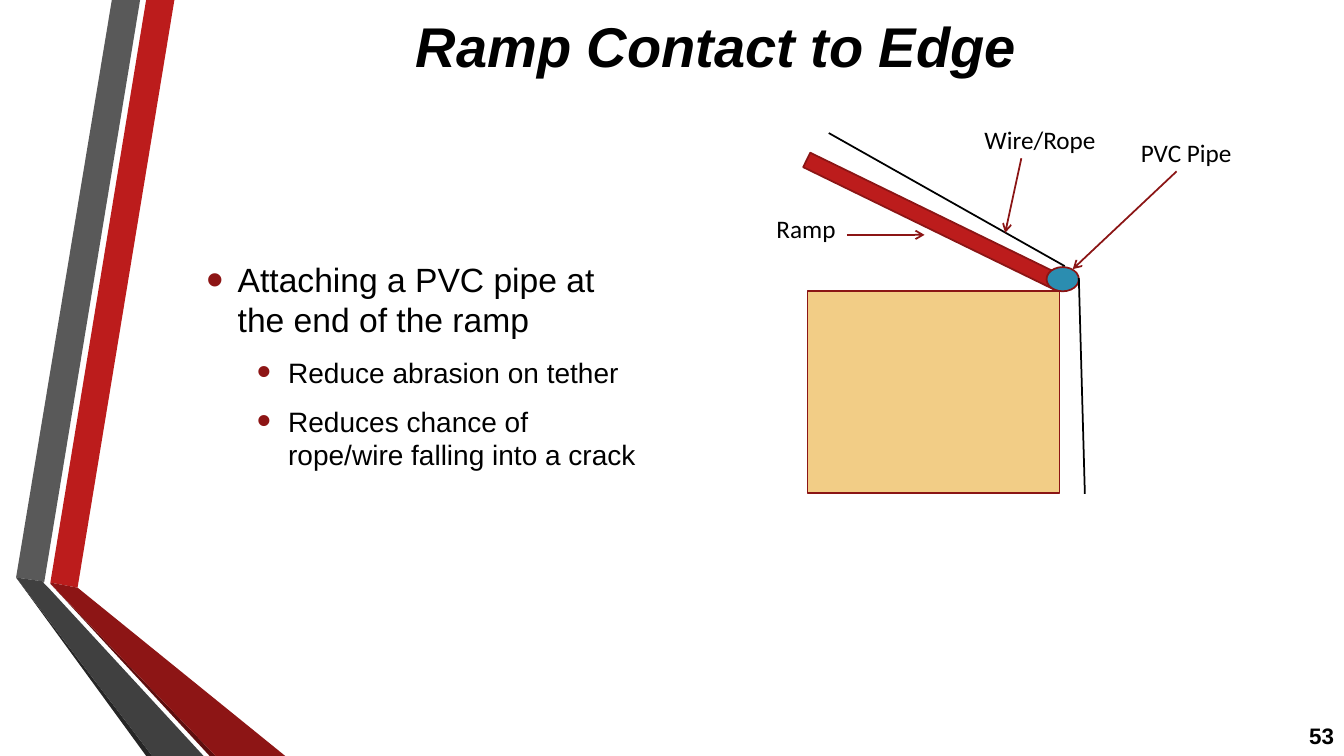
from dataclasses import dataclass

from lxml import etree
from pptx import Presentation
from pptx.dml.color import RGBColor
from pptx.enum.shapes import MSO_CONNECTOR, MSO_SHAPE
from pptx.enum.text import MSO_ANCHOR, PP_ALIGN
from pptx.oxml.ns import qn
from pptx.util import Inches, Pt

RECTANGLE, OVAL = MSO_SHAPE.RECTANGLE, MSO_SHAPE.OVAL
STRAIGHT = MSO_CONNECTOR.STRAIGHT
LEFT, CENTER, RIGHT = PP_ALIGN.LEFT, PP_ALIGN.CENTER, PP_ALIGN.RIGHT
TOP, MIDDLE = MSO_ANCHOR.TOP, MSO_ANCHOR.MIDDLE
BLACK, RED, DARK_RED, OUTLINE = "000000", "BC1C1C", "8D1515", "8B1515"
LINE_WIDTH = Pt(1.25)


@dataclass(frozen=True)
class Ribbon:
    """A filled polygon of the folded side band."""
    color: str
    points: tuple


@dataclass(frozen=True)
class Part:
    """A solid piece of the ramp diagram."""
    kind: int
    frame: tuple
    color: str
    rotation: float = 0


@dataclass(frozen=True)
class Stroke:
    """A straight line with an optional arrowhead at its end."""
    start: tuple
    end: tuple
    color: str = BLACK
    arrow: bool = False


@dataclass(frozen=True)
class Label:
    """A diagram caption."""
    text: str
    frame: tuple


@dataclass(frozen=True)
class Bullet:
    """A bulleted paragraph."""
    text: str
    level: int
    size: int
    indent: float
    before: int


RIBBONS = (
    Ribbon(RED, ((0.5, 5.78), (0.77, 5.83), (1.73, 0), (1.45, 0))),
    Ribbon("595959", ((1.39, 0), (1.11, 0), (0.16, 5.73), (0.44, 5.77))),
    Ribbon("262626", ((0.16, 5.73), (1.45, 7.5), (1.51, 7.5))),
    Ribbon("5E0E0E", ((0.5, 5.79), (2.08, 7.5), (2.14, 7.5))),
    Ribbon(DARK_RED, ((0.5, 5.79), (2.14, 7.5), (2.83, 7.5), (0.77, 5.83), (0.5, 5.78))),
    Ribbon("404040", ((2.02, 7.5), (0.48, 5.83), (0.43, 5.78), (0.44, 5.77),
                      (0.16, 5.73), (1.51, 7.5))),
)
PARTS = (
    Part(RECTANGLE, (8.01, 2.89, 2.5, 2), "F2CD86"),
    Part(RECTANGLE, (9.18, 0.8, 0.16, 2.8), RED, 296),
    Part(OVAL, (10.38, 2.65, 0.32, 0.24), "2B8DB0"),
)
STROKES = (
    Stroke((8.22, 1.32), (10.56, 2.64)),
    Stroke((10.7, 2.76), (10.76, 4.9)),
    Stroke((11.67, 1.7), (10.64, 2.67), OUTLINE, True),
    Stroke((8.4, 2.33), (9.17, 2.33), OUTLINE, True),
    Stroke((10.13, 1.57), (9.97, 2.31), OUTLINE, True),
)
LABELS = (
    Label("PVC Pipe", (10.81, 1.31, 1.91, 0.4)),
    Label("Ramp", (7.43, 2.07, 1.13, 0.4)),
    Label("Wire/Rope", (9.6, 1.18, 1.43, 0.4)),
)
BULLETS = (
    Bullet("Attaching a PVC pipe at the end of the ramp", 0, 24, 0.31, 0),
    Bullet("Reduce abrasion on tether", 1, 20, 0.81, 5),
    Bullet("Reduces chance of rope/wire falling into a crack", 1, 20, 0.81, 5),
)


def rgb(color: str) -> RGBColor:
    """Turn a hex string into a colour."""
    return RGBColor.from_string(color)


def lengths(values: tuple) -> list:
    """Convert a tuple of inches into lengths."""
    return [Inches(value) for value in values]


def paint(shape, color: str) -> None:
    """Give a shape a solid fill and no shadow."""
    shape.shadow.inherit = False
    shape.fill.solid()
    shape.fill.fore_color.rgb = rgb(color)


def write(para, text: str, align: int, **formats) -> None:
    """Add black text to a paragraph with the given font values."""
    para.alignment = align
    span = para.add_run()
    span.text = text
    for name, value in formats.items():
        setattr(span.font, name, value)
    span.font.color.rgb = rgb(BLACK)


def add_box(slide, frame: tuple, anchor: int = TOP):
    """Add a wrapping text box and return its text frame."""
    box = slide.shapes.add_textbox(*lengths(frame)).text_frame
    box.word_wrap = True
    box.vertical_anchor = anchor
    return box


def add_ribbon(slide, ribbon: Ribbon) -> None:
    """Draw one polygon of the side band."""
    first, *rest = [lengths(point) for point in ribbon.points]
    builder = slide.shapes.build_freeform(*first)
    builder.add_line_segments(rest, close=True)
    shape = builder.convert_to_shape()
    paint(shape, ribbon.color)
    shape.line.fill.background()


def add_part(slide, part: Part) -> None:
    """Draw one outlined piece of the diagram."""
    shape = slide.shapes.add_shape(part.kind, *lengths(part.frame))
    paint(shape, part.color)
    shape.line.color.rgb = rgb(OUTLINE)
    shape.line.width = LINE_WIDTH
    shape.rotation = part.rotation


def add_stroke(slide, stroke: Stroke) -> None:
    """Draw a line or an arrow."""
    line = slide.shapes.add_connector(STRAIGHT, *lengths(stroke.start + stroke.end))
    line.line.color.rgb = rgb(stroke.color)
    line.line.width = LINE_WIDTH
    properties = line._element.spPr
    if stroke.arrow:
        etree.SubElement(properties.find(qn("a:ln")), qn("a:tailEnd"), type="arrow")
    etree.SubElement(properties, qn("a:effectLst"))


def add_bullet(para, bullet: Bullet) -> None:
    """Fill a paragraph with a bulleted item."""
    para.level = bullet.level
    para.space_before, para.space_after = Pt(bullet.before), Pt(6)
    properties = para._p.get_or_add_pPr()
    properties.set("marL", str(Inches(bullet.indent)))
    properties.set("indent", str(Inches(-0.31)))
    color = etree.SubElement(properties, qn("a:buClr"))
    etree.SubElement(color, qn("a:srgbClr"), val=DARK_RED)
    etree.SubElement(properties, qn("a:buSzPct"), val="145000")
    etree.SubElement(properties, qn("a:buFont"), typeface="Arial")
    etree.SubElement(properties, qn("a:buChar"), char="•")
    write(para, bullet.text, LEFT, name="Arial", size=Pt(bullet.size))


def main() -> None:
    """Build and save the slide."""
    deck = Presentation()
    deck.slide_width, deck.slide_height = lengths((13.33, 7.5))
    slide = deck.slides.add_slide(deck.slide_layouts[5])
    for ribbon in RIBBONS:
        add_ribbon(slide, ribbon)
    title = slide.shapes.title
    title.left, title.top, title.width, title.height = lengths((1.62, 0.01, 10.96, 0.88))
    title.text_frame.vertical_anchor = MIDDLE
    write(title.text_frame.paragraphs[0], "Ramp Contact to Edge", CENTER,
          name="Arial", size=Pt(40), bold=True, italic=True)
    body = add_box(slide, (1.95, 2.52, 4.54, 4.22))
    for index, bullet in enumerate(BULLETS):
        add_bullet(body.add_paragraph() if index else body.paragraphs[0], bullet)
    number = add_box(slide, (12.73, 7.1, 0.6, 0.4), MIDDLE)
    write(number.paragraphs[0], "53", RIGHT, name="Arial", size=Pt(16), bold=True)
    for part in PARTS:
        add_part(slide, part)
    for stroke in STROKES:
        add_stroke(slide, stroke)
    for label in LABELS:
        box = add_box(slide, label.frame)
        write(box.paragraphs[0], label.text, CENTER, name="Calibri", size=Pt(18))
    deck.save("out.pptx")


if __name__ == "__main__":
    main()
